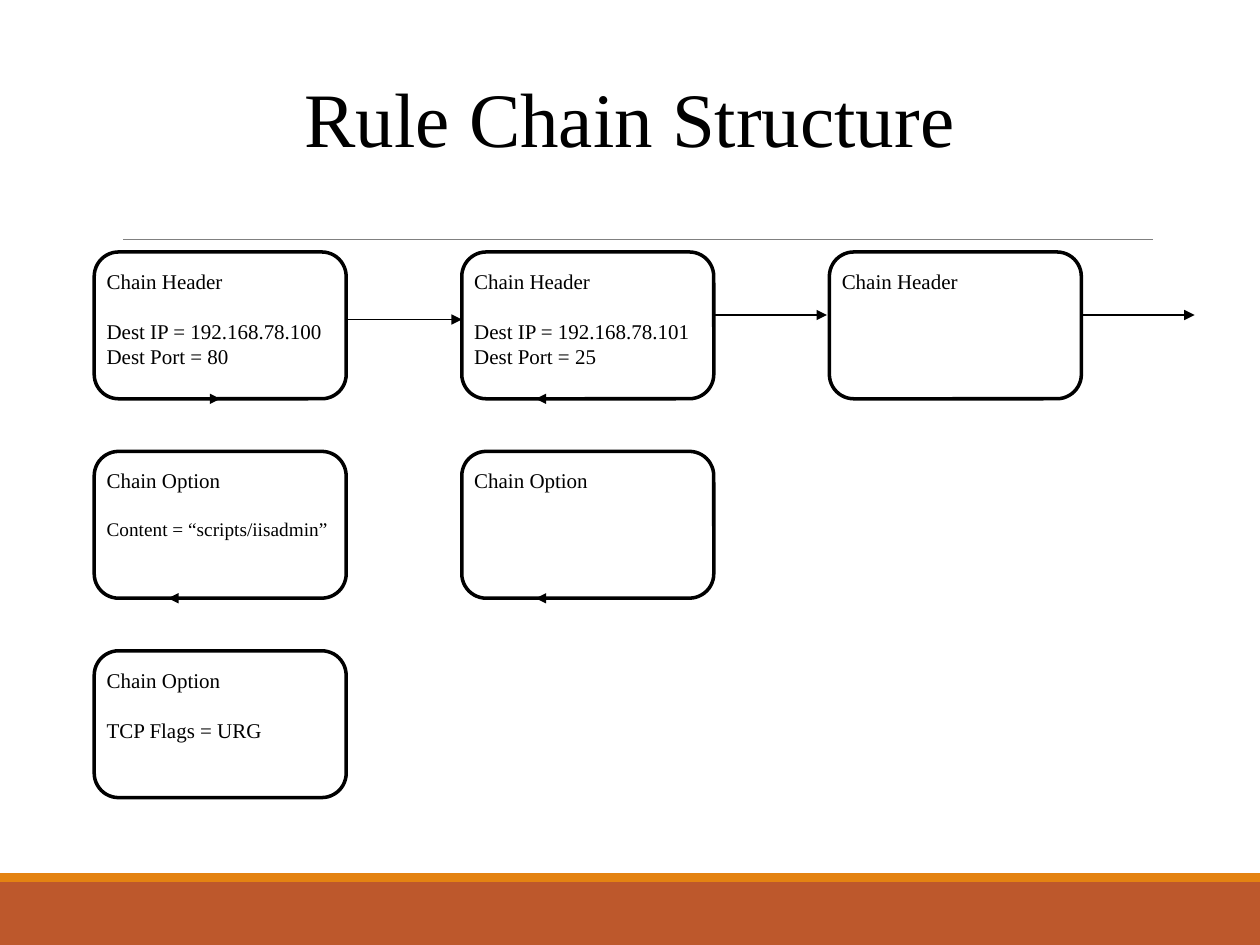
from dataclasses import dataclass
from typing import Optional

from lxml.etree import SubElement
from pptx import Presentation
from pptx.dml.color import RGBColor
from pptx.enum.shapes import MSO_CONNECTOR, MSO_SHAPE
from pptx.enum.text import MSO_ANCHOR, PP_ALIGN
from pptx.oxml.ns import qn
from pptx.util import Cm, Pt


@dataclass(frozen=True)
class Theme:
    font: str = "Times New Roman"
    ink: RGBColor = RGBColor(0x00, 0x00, 0x00)
    paper: RGBColor = RGBColor(0xFF, 0xFF, 0xFF)
    rule: RGBColor = RGBColor(0x80, 0x80, 0x80)
    rust: RGBColor = RGBColor(0xBD, 0x58, 0x2C)
    orange: RGBColor = RGBColor(0xE4, 0x83, 0x12)
    title_size: float = 44
    body_size: float = 12
    small_size: float = 11
    section_gap: float = 14
    border: float = 2
    arrow: float = 0.75
    hairline: float = 0.5


@dataclass(frozen=True)
class ChainNode:
    column: int
    row: int
    heading: str
    text_height: float
    details: tuple[str, ...] = ()
    detail_size: float = Theme.body_size

    @property
    def left(self) -> float:
        return FIRST_LEFT + self.column * COLUMN_PITCH

    @property
    def top(self) -> float:
        return FIRST_TOP + self.row * ROW_PITCH


@dataclass(frozen=True)
class Link:
    start: tuple[float, float]
    end: tuple[float, float]
    begin_node: Optional[int] = None
    end_node: Optional[int] = None


THEME = Theme()
FIRST_LEFT, FIRST_TOP = 1.9, 5.08
COLUMN_PITCH, ROW_PITCH = 7.41, 4.02
NODE_WIDTH, NODE_HEIGHT = 5.08, 2.96
TEXT_DROP = 0.21
STUB = 1.05
BOTTOM = 2

NODES = (
    ChainNode(0, 0, "Chain Header", 2.29, ("Dest IP = 192.168.78.100", "Dest Port = 80")),
    ChainNode(1, 0, "Chain Header", 2.29, ("Dest IP = 192.168.78.101", "Dest Port = 25")),
    ChainNode(2, 0, "Chain Header", 0.76),
    ChainNode(0, 1, "Chain Option", 2.21, ("Content = “scripts/iisadmin”",), THEME.small_size),
    ChainNode(1, 1, "Chain Option", 1.27),
    ChainNode(0, 2, "Chain Option", 1.78, ("TCP Flags = URG",)),
)


def add_line(slide, link: Link, color: RGBColor, width: float, arrow: bool = False):
    line = slide.shapes.add_connector(
        MSO_CONNECTOR.STRAIGHT, *(Cm(value) for value in link.start + link.end))
    line.line.color.rgb = color
    line.line.width = Pt(width)
    properties = line._element.spPr
    if arrow:
        SubElement(properties.find(qn("a:ln")), qn("a:tailEnd"), type="triangle")
    SubElement(properties, qn("a:effectLst"))
    return line


def add_band(slide, top: float, height: float, color: RGBColor) -> None:
    band = slide.shapes.add_shape(MSO_SHAPE.RECTANGLE, 0, Cm(top), Cm(25.4), Cm(height))
    band.shadow.inherit = False
    band.fill.solid()
    band.fill.fore_color.rgb = color
    band.line.fill.background()


def style_paragraph(paragraph, size: float) -> None:
    for run in paragraph.runs:
        run.font.name = THEME.font
        run.font.size = Pt(size)
        run.font.color.rgb = THEME.ink


def add_title(slide, text: str) -> None:
    title = slide.shapes.add_textbox(Cm(1.27), Cm(0.76), Cm(22.86), Cm(3.18)).text_frame
    title.word_wrap = True
    title.vertical_anchor = MSO_ANCHOR.MIDDLE
    title.text = text
    title.paragraphs[0].alignment = PP_ALIGN.CENTER
    style_paragraph(title.paragraphs[0], THEME.title_size)


def add_node(slide, node: ChainNode):
    frame = slide.shapes.add_shape(
        MSO_SHAPE.ROUNDED_RECTANGLE,
        Cm(node.left), Cm(node.top), Cm(NODE_WIDTH), Cm(NODE_HEIGHT))
    frame.shadow.inherit = False
    frame.fill.solid()
    frame.fill.fore_color.rgb = THEME.paper
    frame.line.color.rgb = THEME.ink
    frame.line.width = Pt(THEME.border)

    content = slide.shapes.add_textbox(
        Cm(node.left), Cm(node.top + TEXT_DROP), Cm(NODE_WIDTH), Cm(node.text_height)).text_frame
    content.word_wrap = True
    content.text = "\n".join((node.heading, *node.details))
    heading, *details = content.paragraphs
    style_paragraph(heading, THEME.body_size)
    for detail in details:
        style_paragraph(detail, node.detail_size)
    if details:
        details[0].space_before = Pt(THEME.section_gap)
    return frame


def add_arrow(slide, link: Link, frames: list) -> None:
    arrow = add_line(slide, link, THEME.ink, THEME.arrow, arrow=True)
    if link.begin_node is not None:
        arrow.begin_connect(frames[link.begin_node], BOTTOM)
    if link.end_node is not None:
        arrow.end_connect(frames[link.end_node], BOTTOM)


def bottom_link(index: int, incoming: bool = False) -> Link:
    node = NODES[index]
    middle = node.left + NODE_WIDTH / 2
    edge = node.top + NODE_HEIGHT
    stub_end = (middle - STUB, edge)
    if incoming:
        return Link(stub_end, (middle, edge), end_node=index)
    return Link((middle, edge), stub_end, begin_node=index)


def header_link(index: int, height: float, length: float) -> Link:
    right = NODES[index].left + NODE_WIDTH
    return Link((right, height), (right + length, height))


def main() -> None:
    presentation = Presentation()
    presentation.slide_width, presentation.slide_height = Cm(25.4), Cm(19.05)
    slide = presentation.slides.add_slide(presentation.slide_layouts[6])

    add_line(slide, Link((2.48, 4.82), (23.24, 4.82)), THEME.rule, THEME.hairline)
    add_band(slide, 17.78, 1.27, THEME.rust)
    add_band(slide, 17.6, 0.18, THEME.orange)
    add_title(slide, "Rule Chain Structure")

    frames = [add_node(slide, node) for node in NODES]
    links = (
        header_link(0, 6.44, COLUMN_PITCH - NODE_WIDTH),
        header_link(1, 6.35, 2.28),
        header_link(2, 6.35, 2.28),
        bottom_link(0, incoming=True),
        bottom_link(1),
        bottom_link(3),
        bottom_link(4),
    )
    for link in links:
        add_arrow(slide, link, frames)

    presentation.save("out.pptx")


if __name__ == "__main__":
    main()
